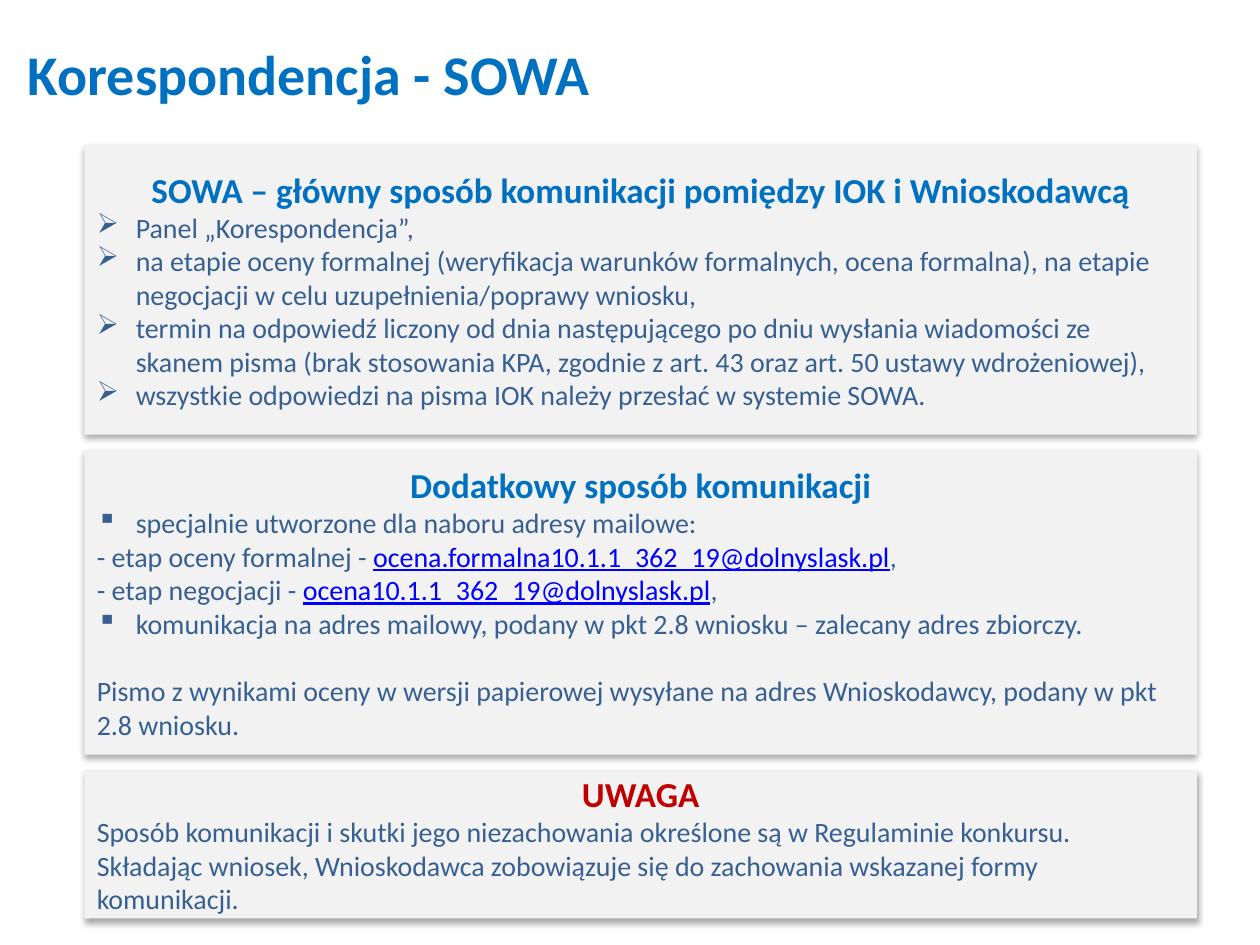
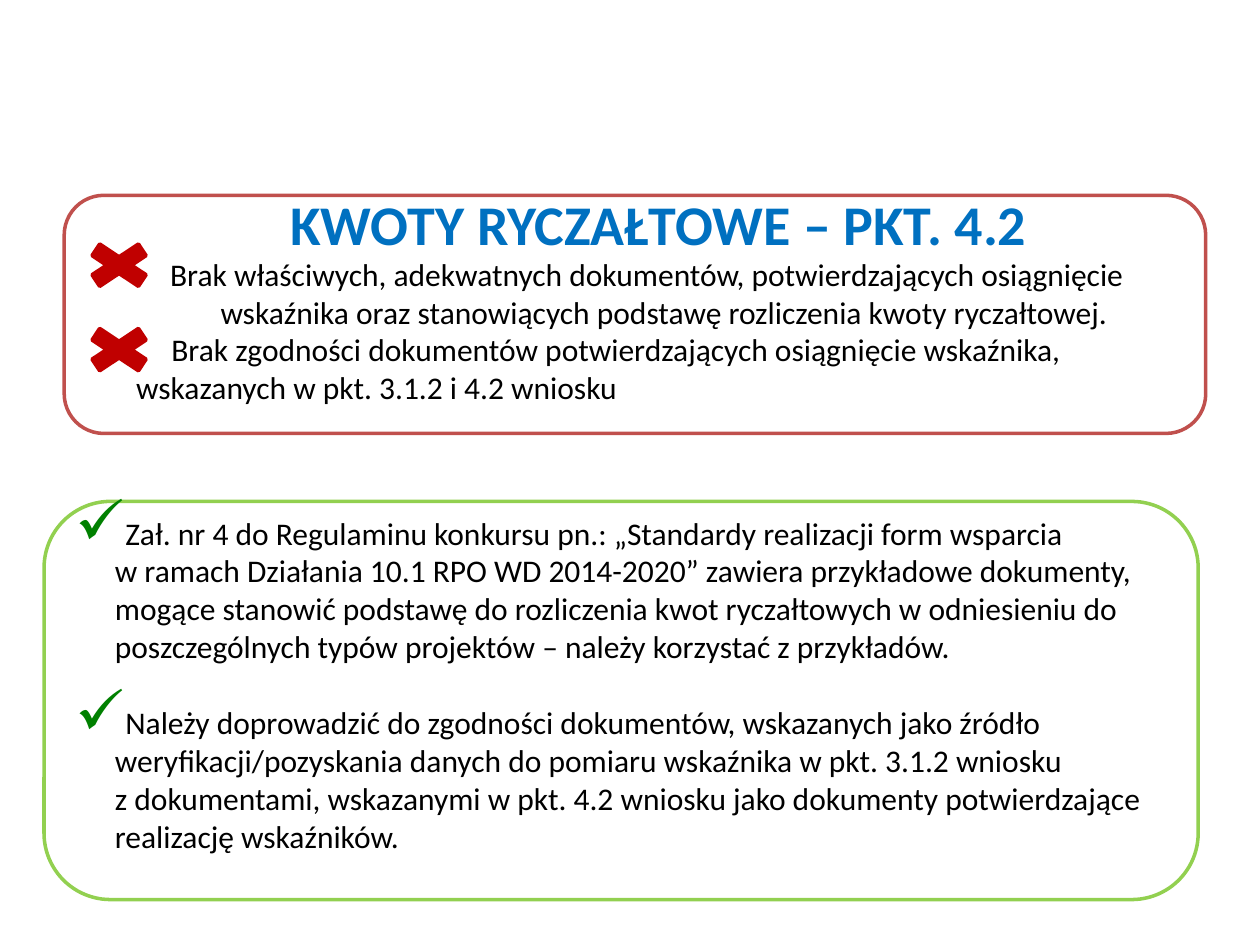
import pptx
import pptx.util
import pptx.dml.color
import pptx.enum.shapes
import pptx.enum.text
import pptx.oxml
import pptx.oxml.ns
from lxml import etree

Inches = pptx.util.Inches
Pt = pptx.util.Pt
RGBColor = pptx.dml.color.RGBColor
SHAPE = pptx.enum.shapes.MSO_SHAPE
ALIGN = pptx.enum.text.PP_ALIGN
ANCHOR = pptx.enum.text.MSO_ANCHOR

FONT = "Calibri"
BLUE = RGBColor(0x00, 0x70, 0xC0)
STEEL = RGBColor(0x37, 0x60, 0x92)
LINK = RGBColor(0x00, 0x00, 0xFF)
DARK_RED = RGBColor(0xC0, 0x00, 0x00)
BRICK = RGBColor(0xC0, 0x50, 0x4D)
LIME = RGBColor(0x92, 0xD0, 0x50)
GREEN = RGBColor(0x00, 0x80, 0x00)
BLACK = RGBColor(0x00, 0x00, 0x00)
PANEL_GREY = RGBColor(0xF2, 0xF2, 0xF2)

TITLE = {"size": Pt(32), "bold": True, "color": BLUE}
HEADING = {"size": Pt(20), "bold": True, "color": BLUE}
WARNING = {**HEADING, "color": DARK_RED}
BODY = {"size": Pt(16), "bold": False, "color": STEEL}
ADDRESS = {**BODY, "color": LINK, "underline": True}
NOTE = {"size": Pt(18), "bold": False, "color": BLACK}

HANG = 0.31
PANEL_LEFT, PANEL_WIDTH = 0.67, 8.83


def add_span(para, text, style):
    """Add a run; a line feed in the text becomes a line break."""
    for index, line in enumerate(text.split("\n")):
        if index:
            para.add_line_break()
        span = para.add_run()
        span.text = line
        span.font.name = FONT
        for name, value in style.items():
            if name == "color":
                span.font.color.rgb = value
            else:
                setattr(span.font, name, value)


def set_indent(para, left, first):
    properties = para._p.get_or_add_pPr()
    properties.set("marL", str(Inches(left)))
    properties.set("indent", str(Inches(first)))


def set_bullet(para, mark, color=None, percent=100):
    set_indent(para, HANG, -HANG)
    properties = para._p.get_or_add_pPr()
    tag = pptx.oxml.ns.qn
    if color is not None:
        holder = etree.SubElement(properties, tag("a:buClr"))
        etree.SubElement(holder, tag("a:srgbClr")).set("val", str(color))
    etree.SubElement(properties, tag("a:buSzPct")).set("val", str(percent * 1000))
    etree.SubElement(properties, tag("a:buChar")).set("char", mark)


def add_para(frame, *spans, align=ALIGN.LEFT, before=0):
    """Add a paragraph of (text, style) spans, using the empty first one if free."""
    para = frame.paragraphs[0]
    if para.runs:
        para = frame.add_paragraph()
    para.alignment = align
    if before:
        para.space_before = Pt(before)
    for text, style in spans:
        add_span(para, text, style)
    return para


def add_box(page, kind, left, top, width, height, fill=None, line=None):
    box = page.shapes.add_shape(kind, Inches(left), Inches(top), Inches(width), Inches(height))
    box.shadow.inherit = False
    if fill is None:
        box.fill.background()
    else:
        box.fill.solid()
        box.fill.fore_color.rgb = fill
    if line is None:
        box.line.fill.background()
    else:
        box.line.color.rgb = line
        box.line.width = Pt(2)
    box.text_frame.word_wrap = True
    box.text_frame.vertical_anchor = ANCHOR.MIDDLE
    return box


def drop_shadow(box):
    effects = box._element.spPr.find(pptx.oxml.ns.qn("a:effectLst"))
    effects.append(pptx.oxml.parse_xml(
        f'<a:outerShdw {pptx.oxml.ns.nsdecls("a")} blurRad="{Pt(3.5)}" dist="{Pt(2.2)}" '
        'dir="5400000" rotWithShape="0"><a:srgbClr val="000000">'
        '<a:alpha val="32000"/></a:srgbClr></a:outerShdw>'))


def add_panel(page, top, height, heading, style=HEADING):
    """Add a grey shadowed panel with a centred heading and return its text frame."""
    panel = add_box(page, SHAPE.RECTANGLE, PANEL_LEFT, top, PANEL_WIDTH, height, fill=PANEL_GREY)
    drop_shadow(panel)
    add_para(panel.text_frame, (heading, style), align=ALIGN.CENTER)
    return panel.text_frame


def add_page(deck, title, left, top, width, align):
    page = deck.slides.add_slide(deck.slide_layouts[5])
    holder = page.shapes.title
    places = {"left": left, "top": top, "width": width, "height": 0.64}
    for name, value in places.items():
        setattr(holder, name, Inches(value))
    frame = holder.text_frame
    frame.auto_size = pptx.enum.text.MSO_AUTO_SIZE.NONE
    frame.word_wrap = False
    add_para(frame, (title, TITLE), align=align)
    return page


def build_correspondence(deck):
    page = add_page(deck, "Korespondencja - SOWA", 0.12, 0.26, 4.67, ALIGN.LEFT)

    main_way = add_panel(page, 1.15, 2.3, "SOWA – główny sposób komunikacji pomiędzy IOK i Wnioskodawcą")
    for text in (
        "Panel „Korespondencja”,",
        "na etapie oceny formalnej (weryfikacja warunków formalnych, ocena formalna), "
        "na etapie negocjacji w celu uzupełnienia/poprawy wniosku,",
        "termin na odpowiedź liczony od dnia następującego po dniu wysłania wiadomości ze "
        "skanem pisma (brak stosowania KPA, zgodnie z art. 43 oraz art. 50 ustawy wdrożeniowej),",
        "wszystkie odpowiedzi na pisma IOK należy przesłać w systemie SOWA.",
    ):
        set_bullet(add_para(main_way, (text, BODY)), "➢")

    extra_way = add_panel(page, 3.57, 2.42, "Dodatkowy sposób komunikacji")
    set_bullet(add_para(extra_way, ("specjalnie utworzone dla naboru adresy mailowe:", BODY)), "▪")
    for stage, address in (
        ("- etap oceny formalnej - ", "ocena.formalna10.1.1_362_19@dolnyslask.pl"),
        ("- etap negocjacji - ", "ocena10.1.1_362_19@dolnyslask.pl"),
    ):
        add_para(extra_way, (stage, BODY), (address, ADDRESS), (",", BODY))
    set_bullet(add_para(extra_way, (
        "komunikacja na adres mailowy, podany w pkt 2.8 wniosku – zalecany adres zbiorczy.", BODY)), "▪")
    add_para(extra_way, (
        "Pismo z wynikami oceny w wersji papierowej wysyłane na adres Wnioskodawcy, "
        "podany w pkt 2.8 wniosku.", BODY), before=19.5)

    warning = add_panel(page, 6.11, 1.18, "UWAGA", WARNING)
    for text in (
        "Sposób komunikacji i skutki jego niezachowania określone są w Regulaminie konkursu.",
        "Składając wniosek, Wnioskodawca zobowiązuje się do zachowania wskazanej formy komunikacji.",
    ):
        add_para(warning, (text, BODY))


def build_lump_sums(deck):
    page = add_page(deck, "KWOTY RYCZAŁTOWE – PKT. 4.2", 0.7, 1.45, 9.06, ALIGN.CENTER)

    faults = add_box(page, SHAPE.ROUNDED_RECTANGLE, 0.51, 1.55, 9.06, 1.89, line=BRICK).text_frame
    faults.vertical_anchor = ANCHOR.TOP
    faults.margin_top = Inches(0.38)
    for text, left, first in (
        ("Brak właściwych, adekwatnych dokumentów, potwierdzających osiągnięcie "
         "wskaźnika oraz stanowiących podstawę rozliczenia kwoty ryczałtowej.", 1.05, -0.4),
        ("Brak zgodności dokumentów potwierdzających osiągnięcie wskaźnika, "
         "wskazanych w pkt. 3.1.2 i 4.2 wniosku", 0.38, 0.28),
    ):
        set_indent(add_para(faults, (text, NOTE)), left, first)
    for cross_top in (1.87, 2.54):
        add_box(page, SHAPE.MATH_MULTIPLY, 0.59, cross_top, 0.71, 0.47, fill=DARK_RED, line=DARK_RED)

    advice = add_box(page, SHAPE.ROUNDED_RECTANGLE, 0.35, 3.98, 9.16, 3.16, line=LIME).text_frame
    advice.margin_top = 0
    advice.margin_bottom = Inches(0.26)
    for text, before in (
        ("Zał. nr 4 do Regulaminu konkursu pn.: „Standardy realizacji form wsparcia\n"
         "w ramach Działania 10.1 RPO WD 2014-2020” zawiera przykładowe dokumenty, mogące "
         "stanowić podstawę do rozliczenia kwot ryczałtowych w odniesieniu do poszczególnych "
         "typów projektów – należy korzystać z przykładów.", 0),
        ("Należy doprowadzić do zgodności dokumentów, wskazanych jako źródło "
         "weryfikacji/pozyskania danych do pomiaru wskaźnika w pkt. 3.1.2 wniosku\n"
         "z dokumentami, wskazanymi w pkt. 4.2 wniosku jako dokumenty potwierdzające "
         "realizację wskaźników.", 22),
    ):
        set_bullet(add_para(advice, (text, NOTE), before=before), "✓", GREEN, 200)


def main():
    deck = pptx.Presentation()
    deck.slide_width, deck.slide_height = Inches(10), Inches(7.5)
    build_correspondence(deck)
    build_lump_sums(deck)
    deck.save("out.pptx")


if __name__ == "__main__":
    main()
